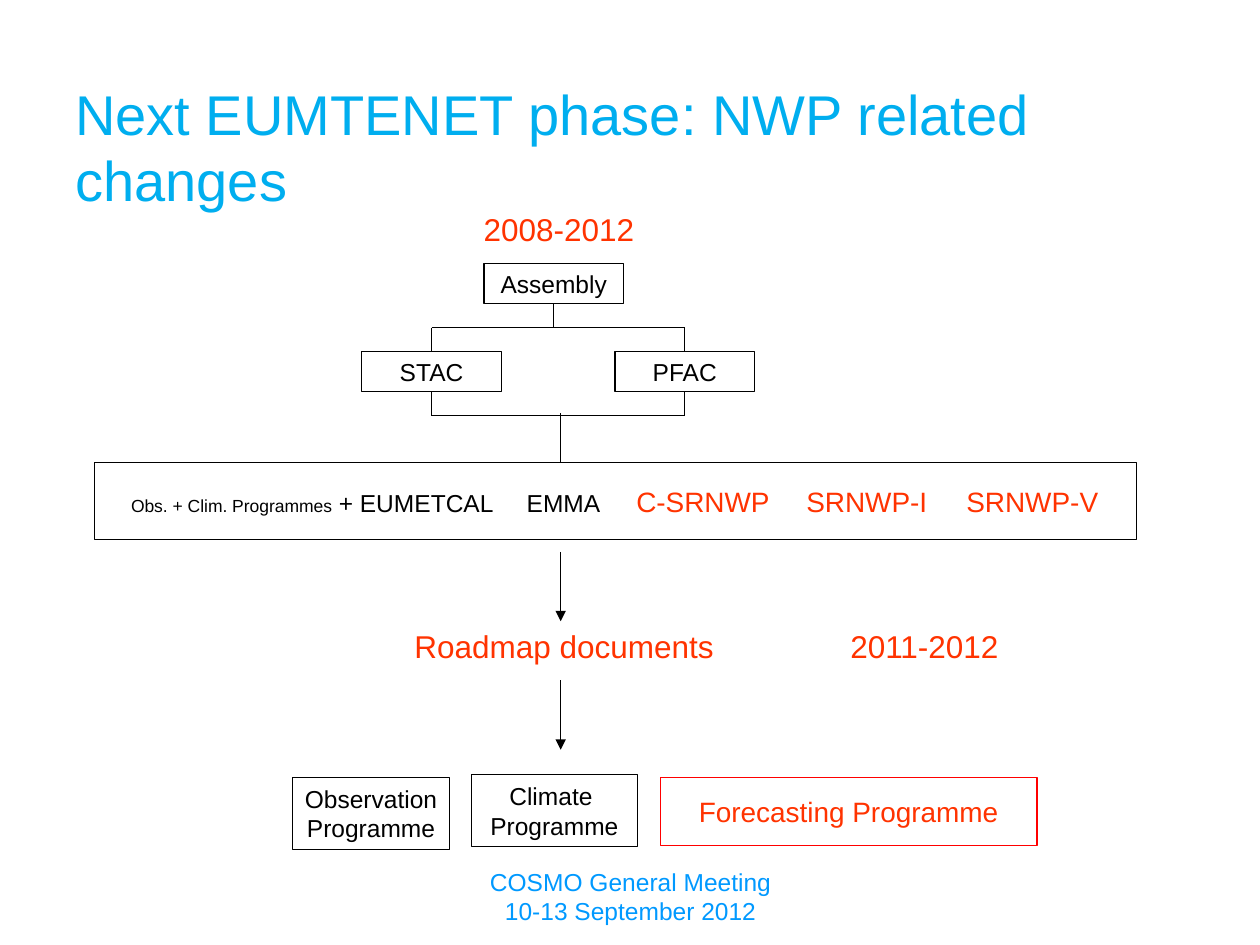
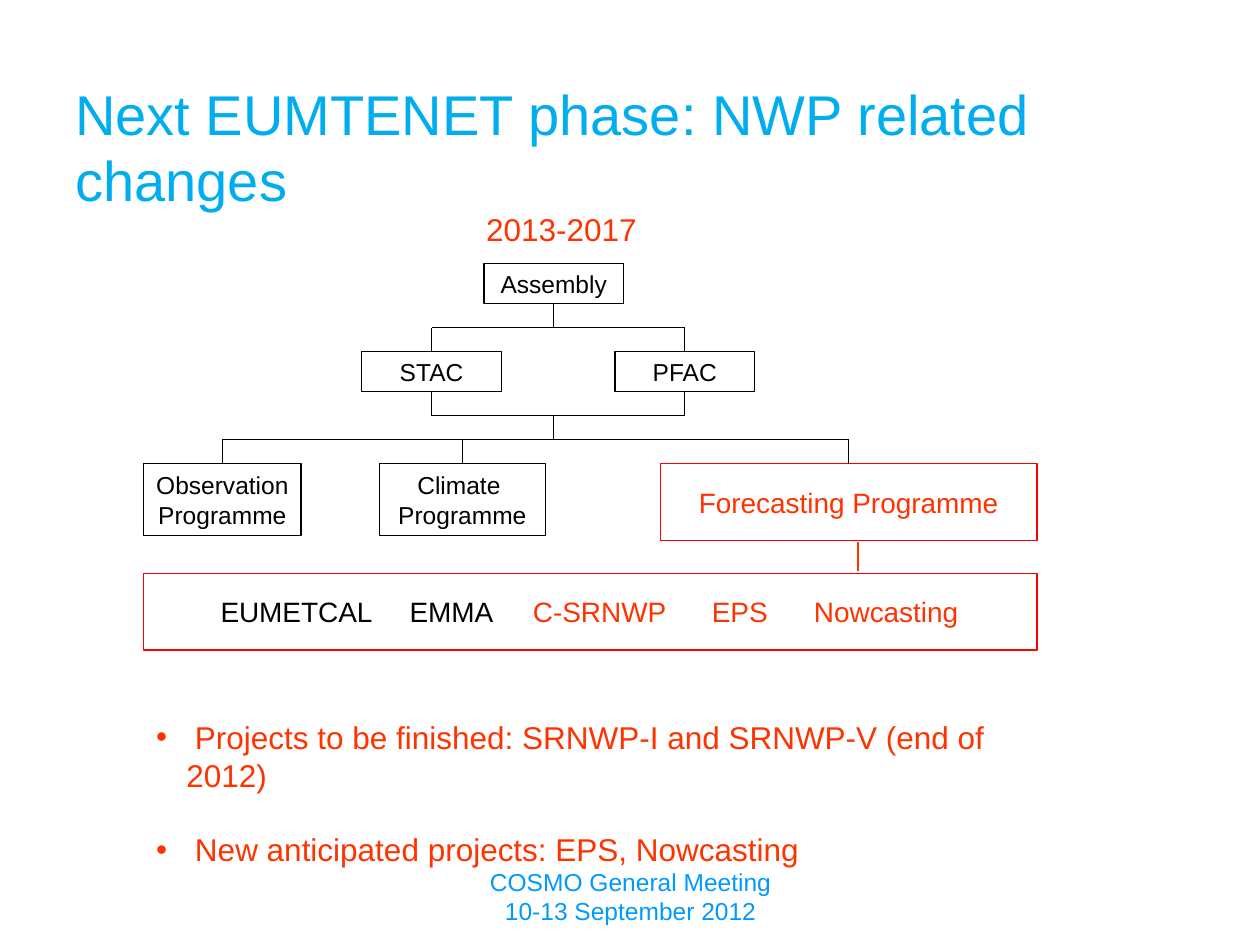
"""Build two slides on the change between two programme phases."""
from dataclasses import dataclass

from lxml.etree import SubElement as Sub
from pptx import Presentation
from pptx.dml.color import RGBColor as Color
from pptx.enum.shapes import MSO_CONNECTOR as Link, MSO_SHAPE as Form
from pptx.enum.text import MSO_ANCHOR as Anchor, PP_ALIGN as Align
from pptx.oxml.ns import qn
from pptx.util import Inches, Pt


@dataclass(frozen=True)
class Theme:
    font: str = "Arial"
    black: str = "000000"
    red: str = "FF0000"
    warm: str = "FF3300"
    sky: str = "00AEEF"
    blue: str = "0099FF"
    tiny: int = 10
    small: int = 14
    mid: int = 16
    large: int = 18
    huge: int = 32
    rule: float = 0.75


T = Theme()

TITLE = "Next EUMTENET phase: NWP related changes"
FOOT = ["COSMO General Meeting", "10-13 September 2012"]
TOP = {"Assembly": (3.84, 2.09), "STAC": (2.87, 2.79), "PFAC": (4.88, 2.79)}
NODE = (1.11, 0.32)
STEP = 0.19
OBS = ["Observation", "Programme"]
CLIM = ["Climate ", "Programme"]
CAST = ["Forecasting Programme"]

OLD = {
    "years": ("2008-2012", 3.74),
    "units": [(OBS, (2.32, 6.17, 1.25, 0.57)),
              (CLIM, (3.74, 6.15, 1.32, 0.57))],
    "cast": (5.24, 6.17, 2.99, 0.54),
    "row": (0.75, 3.67, 8.27, 0.61),
    "edge": T.black,
    "pad": 0.29,
    "tabs": [3.14, 4.01, 5.36, 6.63],
    "runs": [("Obs. + Clim. Programmes", T.tiny, T.black),
             (" + EUMETCAL\tEMMA\t", T.small, T.black),
             ("C-SRNWP\tSRNWP-I\tSRNWP-V", T.mid, T.warm)],
}
NEW = {
    "years": ("2013-2017", 3.76),
    "units": [(OBS, (1.14, 3.68, 1.25, 0.57)),
              (CLIM, (3.01, 3.68, 1.32, 0.57))],
    "cast": (5.24, 3.68, 2.99, 0.61),
    "row": (1.14, 4.55, 7.09, 0.61),
    "edge": T.red,
    "pad": 0.61,
    "tabs": [1.5, 2.48, 3.9, 4.71],
    "runs": [("EUMETCAL\tEMMA\t", T.mid, T.black),
             ("C-SRNWP\tEPS\tNowcasting", T.mid, T.warm)],
}
ROAD = [("Roadmap documents", 3.19, 2.76), ("2011-2012", 6.65, 1.5)]
ARROWS = [4.38, 5.4]
NOTES = [" Projects to be finished: SRNWP-I and SRNWP-V (end of 2012)",
         " New anticipated projects: EPS, Nowcasting"]


def write(frame, paras, align=Align.LEFT):
    """Fill a frame with paragraphs of (text, size, colour) runs."""
    for i, runs in enumerate(paras):
        para = frame.add_paragraph() if i else frame.paragraphs[0]
        para.alignment = align
        for text, size, tint in runs:
            run = para.add_run()
            run.text = text
            run.font.name = T.font
            run.font.size = Pt(size)
            run.font.color.rgb = Color.from_string(tint)


def plain(lines, size, tint):
    """Turn lines into paragraphs of one run."""
    return [[(line, size, tint)] for line in lines]


def label(slide, place, paras, align=Align.LEFT):
    """Add a wrapping text box and return its frame."""
    frame = slide.shapes.add_textbox(*map(Inches, place)).text_frame
    frame.word_wrap = True
    write(frame, paras, align)
    return frame


def box(slide, place, paras, edge=T.black, align=Align.CENTER):
    """Add an outlined box and return its frame."""
    shape = slide.shapes.add_shape(Form.RECTANGLE, *map(Inches, place))
    shape.shadow.inherit = False
    shape.fill.background()
    shape.line.color.rgb = Color.from_string(edge)
    shape.line.width = Pt(T.rule)
    frame = shape.text_frame
    frame.word_wrap = align == Align.LEFT
    frame.vertical_anchor = Anchor.MIDDLE
    write(frame, paras, align)
    return frame


def line(slide, x1, y1, x2, y2, tint=T.black, arrow=False):
    """Add a straight line, with an arrowhead on request."""
    wire = slide.shapes.add_connector(Link.STRAIGHT, *map(Inches, (x1, y1, x2, y2)))
    wire.line.color.rgb = Color.from_string(tint)
    wire.line.width = Pt(T.rule)
    props = wire.element.spPr
    if arrow:
        Sub(props.find(qn("a:ln")), qn("a:tailEnd"), type="triangle")
    Sub(props, qn("a:effectLst"))


def frame_page(slide, years):
    """Add the title, footer, years and top tree."""
    head = label(slide, (0.5, 0.37, 9, 1.57), plain([TITLE], T.huge, T.sky))
    head.margin_top = Inches(0.1)
    head.vertical_anchor = Anchor.MIDDLE
    head.paragraphs[0].line_spacing = 0.98
    label(slide, (3.42, 6.83, 3.17, 0.52), plain(FOOT, T.small, T.blue), Align.CENTER)
    text, left = years
    label(slide, (left, 1.62, 1.5, 0.4), plain([text], T.large, T.warm))
    for name, spot in TOP.items():
        box(slide, spot + NODE, plain([name], T.small, T.black))
    wide, high = NODE
    mid, *ends = [x + wide / 2 for x, y in TOP.values()]
    roof, floor = TOP["Assembly"][1] + high, TOP["STAC"][1] + high
    line(slide, mid, roof, mid, roof + STEP)
    for bar, stem in (roof + STEP, roof + 2 * STEP), (floor + STEP, floor):
        line(slide, ends[0], bar, ends[1], bar)
        for x in ends:
            line(slide, x, bar, x, stem)
    return mid, floor + STEP


def programmes(slide, data):
    """Add the programme boxes and the project row."""
    for lines, place in data["units"]:
        box(slide, place, plain(lines, T.small, T.black))
    box(slide, data["cast"], plain(CAST, T.mid, T.warm), T.red)
    row = box(slide, data["row"], [data["runs"]], data["edge"], Align.LEFT)
    row.margin_left = Inches(data["pad"])
    stops = Sub(row.paragraphs[0]._p.get_or_add_pPr(), qn("a:tabLst"))
    for stop in data["tabs"]:
        Sub(stops, qn("a:tab"), pos=str(Inches(stop)), algn="l")


def old_page(slide):
    """Draw the phase that ends, with its roadmap."""
    frame_page(slide, OLD["years"])
    programmes(slide, OLD)
    axis = 4.45
    line(slide, axis, 3.28, axis, OLD["row"][1])
    for y in ARROWS:
        line(slide, axis, y, axis, y + 0.55, arrow=True)
    for text, x, wide in ROAD:
        label(slide, (x, 4.93, wide, 0.4), plain([text], T.large, T.warm))


def new_page(slide):
    """Draw the phase that starts, with notes."""
    mid, bar = frame_page(slide, NEW["years"])
    programmes(slide, NEW)
    rail = bar + STEP
    line(slide, mid, bar, mid, rail)
    spots = [place for _, place in NEW["units"]] + [NEW["cast"]]
    drops = [x + wide / 2 for x, _, wide, _ in spots]
    line(slide, drops[0], rail, drops[-1], rail)
    for x in drops:
        line(slide, x, rail, x, rail + STEP)
    line(slide, 6.81, 4.3, 6.81, 4.53, T.warm)
    notes = label(slide, (1.14, 5.65, 7.33, 1.3), plain(NOTES, T.large, T.warm))
    for i, para in enumerate(notes.paragraphs):
        props = para._p.get_or_add_pPr()
        props.set("marL", str(Inches(0.24)))
        props.set("indent", str(-Inches(0.24)))
        Sub(props, qn("a:buFont"), typeface=T.font)
        Sub(props, qn("a:buChar"), char="•")
        if i:
            para.space_before = Pt(21)


def main():
    """Build and save the deck."""
    deck = Presentation()
    deck.slide_width, deck.slide_height = Inches(10), Inches(7.5)
    for draw in old_page, new_page:
        draw(deck.slides.add_slide(deck.slide_layouts[6]))
    deck.save("out.pptx")


if __name__ == "__main__":
    main()
